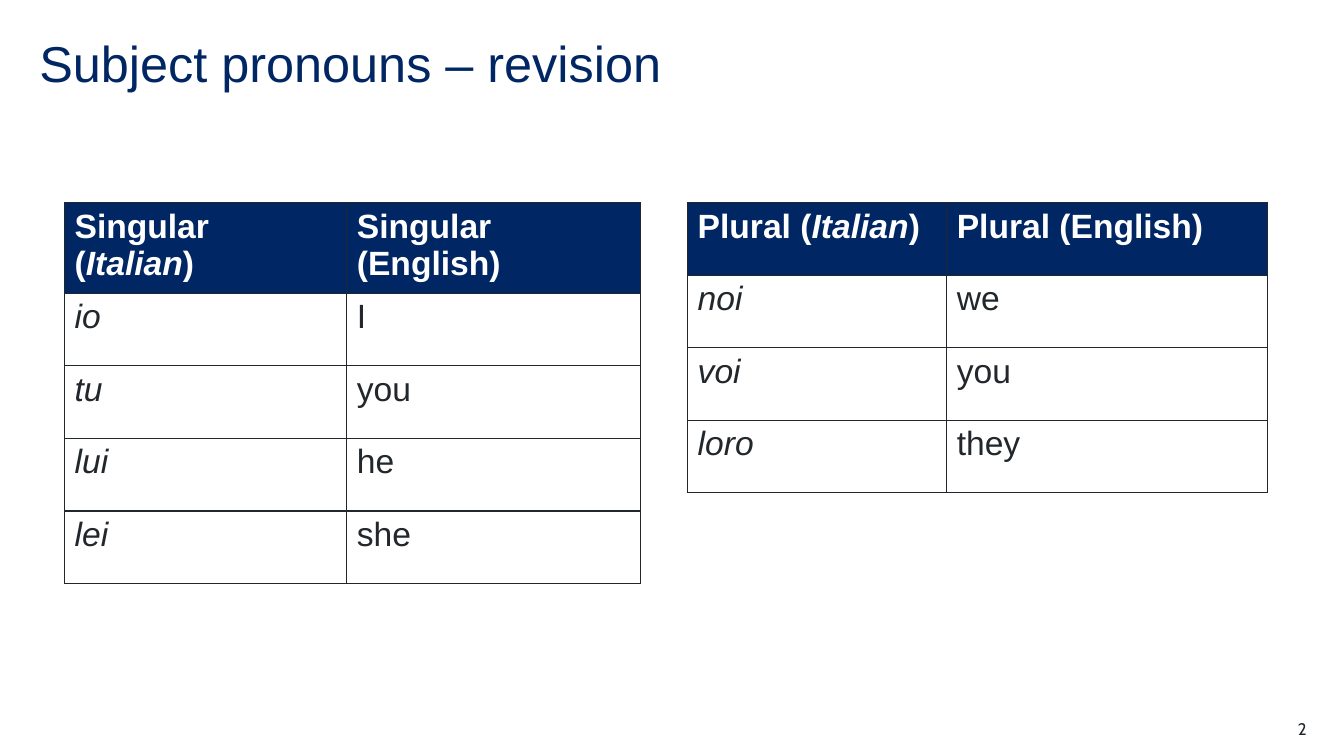
"""Builds a slide revising the Italian subject pronouns."""
from lxml.etree import SubElement
from pptx import Presentation
from pptx.dml.color import RGBColor
from pptx.enum.text import PP_ALIGN
from pptx.oxml.ns import qn
from pptx.util import Inches, Pt

HEADING = "Subject pronouns – revision"
PAGE_NUMBER = "2"
PRONOUN_TABLES = [
    {
        "number": "Singular",
        "left": 0.64,
        "columns": (2.8, 2.91),
        "pronouns": [("io", "I"), ("tu", "you"), ("lui", "he"), ("lei", "she")],
    },
    {
        "number": "Plural",
        "left": 6.82,
        "columns": (2.57, 3.18),
        "pronouns": [("noi", "we"), ("voi", "you"), ("loro", "they")],
    },
]
TABLE_TOP = 2.01
ROW_HEIGHT = 0.72
NAVY = RGBColor(0x00, 0x26, 0x64)
INK = RGBColor(0x22, 0x27, 0x2B)
WHITE = RGBColor(0xFF, 0xFF, 0xFF)


def add_run(paragraph, text, size, color, face="Arial", bold=False, italic=False):
    run = paragraph.add_run()
    run.text = text
    font = run.font
    font.name, font.size = face, Pt(size)
    font.bold, font.italic = bold, italic
    font.color.rgb = color


def add_line_of_text(slide, left, top, width, height):
    frame = slide.shapes.add_textbox(
        Inches(left), Inches(top), Inches(width), Inches(height)).text_frame
    frame.word_wrap = True
    frame.margin_left = frame.margin_right = 0
    frame.margin_top = frame.margin_bottom = 0
    return frame.paragraphs[0]


def style_cell(cell, fill):
    properties = cell._tc.get_or_add_tcPr()
    for side in ("a:lnL", "a:lnR", "a:lnT", "a:lnB"):
        border = SubElement(properties, qn(side), w=str(Pt(1)))
        solid = SubElement(border, qn("a:solidFill"))
        SubElement(solid, qn("a:srgbClr"), val=str(INK))
    cell.fill.solid()
    cell.fill.fore_color.rgb = fill


def add_pronoun_table(slide, number, left, columns, pronouns):
    header = [
        [(f"{number} (", False), ("Italian", True), (")", False)],
        [(f"{number} (English)", False)],
    ]
    body = [[[(italian, True)], [(english, False)]] for italian, english in pronouns]
    rows = [header] + body
    table = slide.shapes.add_table(
        len(rows), len(columns), Inches(left), Inches(TABLE_TOP),
        Inches(sum(columns)), Inches(ROW_HEIGHT * len(rows))).table
    for column, width in zip(table.columns, columns):
        column.width = Inches(width)
    for r, row in enumerate(rows):
        table.rows[r].height = Inches(ROW_HEIGHT)
        is_header = r == 0
        for c, parts in enumerate(row):
            cell = table.cell(r, c)
            style_cell(cell, NAVY if is_header else WHITE)
            for text, italic in parts:
                add_run(cell.text_frame.paragraphs[0], text, 24,
                        WHITE if is_header else INK, bold=is_header, italic=italic)


def main():
    deck = Presentation()
    deck.slide_width, deck.slide_height = Inches(13.33), Inches(7.5)
    slide = deck.slides.add_slide(deck.slide_layouts[6])

    heading = add_line_of_text(slide, 0.39, 0.39, 12.56, 0.6)
    heading.line_spacing = 0.9
    add_run(heading, HEADING, 36, NAVY)

    for content in PRONOUN_TABLES:
        add_pronoun_table(slide, **content)

    page_number = add_line_of_text(slide, 12.17, 7.13, 0.79, 0.2)
    page_number.alignment = PP_ALIGN.RIGHT
    add_run(page_number, PAGE_NUMBER, 12, INK, face="Cabin")

    deck.save("out.pptx")


if __name__ == "__main__":
    main()
